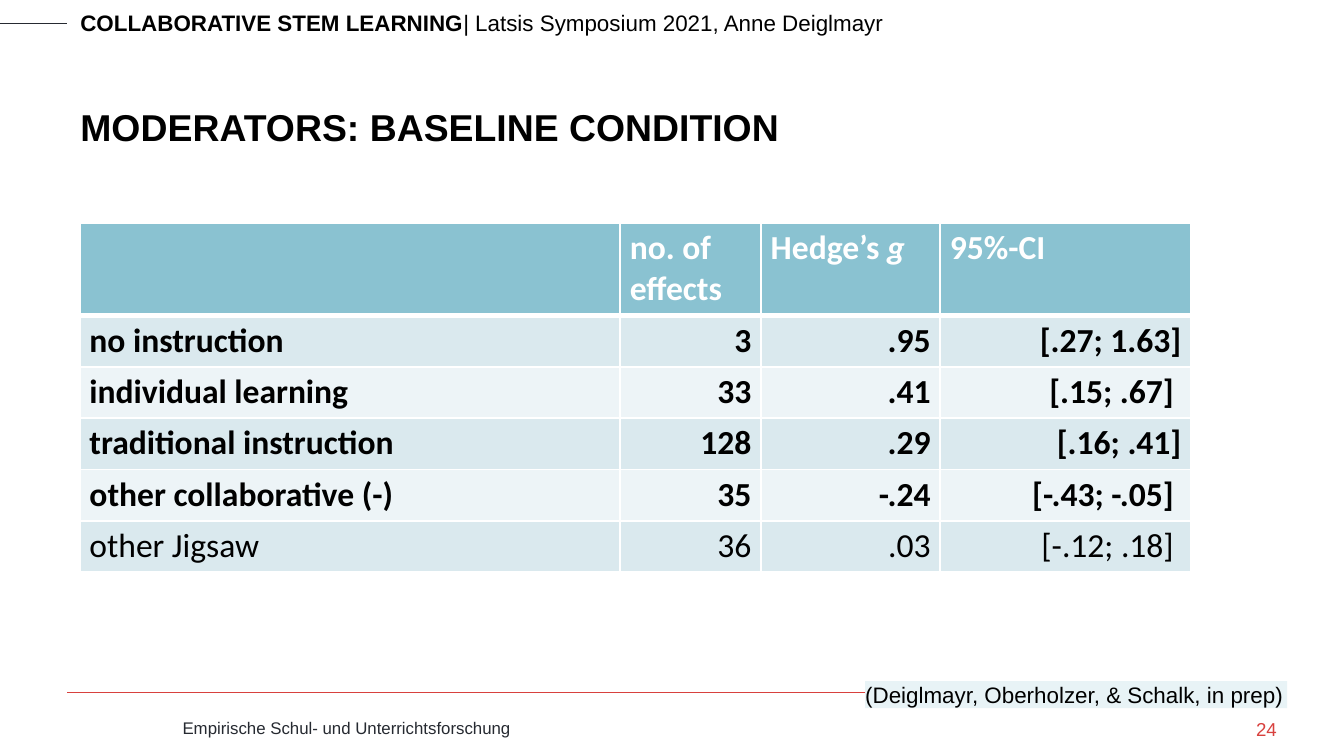
from lxml import etree
from pptx import Presentation
from pptx.dml.color import RGBColor
from pptx.enum.shapes import MSO_CONNECTOR
from pptx.enum.text import MSO_ANCHOR, PP_ALIGN
from pptx.oxml.ns import qn
from pptx.util import Pt

STRAIGHT = MSO_CONNECTOR.STRAIGHT
TOP, BOTTOM = MSO_ANCHOR.TOP, MSO_ANCHOR.BOTTOM
LEFT, RIGHT = PP_ALIGN.LEFT, PP_ALIGN.RIGHT

BLACK = RGBColor(0x00, 0x00, 0x00)
WHITE = RGBColor(0xFF, 0xFF, 0xFF)
DARK = RGBColor(0x26, 0x2A, 0x31)
RED = RGBColor(0xD8, 0x41, 0x3E)
HEADER_FILL = RGBColor(0x8A, 0xC2, 0xD1)
BAND_FILLS = (RGBColor(0xDA, 0xE9, 0xEE), RGBColor(0xED, 0xF4, 0xF7))
NOTE_FILL = RGBColor(0xE8, 0xF3, 0xF6)

COL_WIDTHS = (289.5, 75.5, 96, 134.5)
HEADER_HEIGHT, ROW_HEIGHT = 49.5, 27.5
HEADER = ("", "no. of effects", "Hedge’s ", "95%-CI")
# Label, number of effects, effect size, interval, bold
ROWS = (
    ("no instruction", "3", ".95", "[.27; 1.63]", True),
    ("individual learning", "33", ".41", "[.15; .67] ", True),
    ("traditional instruction", "128", ".29", "[.16; .41]", True),
    ("other collaborative (-)", "35", "-.24", "[-.43; -.05] ", True),
    ("other Jigsaw", "36", ".03", "[-.12; .18] ", False),
)


def style_run(r, size, color, bold=False, font="Arial"):
    r.font.name = font
    r.font.size = Pt(size)
    r.font.bold = bold
    r.font.color.rgb = color


def add_text(slide, box, text, size, color=BLACK, bold=False, align=LEFT,
             anchor=TOP, inset=True, wrap=True):
    s = slide.shapes.add_textbox(*[Pt(v) for v in box])
    tf = s.text_frame
    tf.word_wrap = wrap
    tf.vertical_anchor = anchor
    if not inset:
        tf.margin_left = tf.margin_right = tf.margin_top = tf.margin_bottom = 0
    p = tf.paragraphs[0]
    p.text = text
    p.alignment = align
    style_run(p.runs[0], size, color, bold)
    return s


def add_rule(slide, x1, x2, y, color):
    s = slide.shapes.add_connector(STRAIGHT, Pt(x1), Pt(y), Pt(x2), Pt(y))
    s.line.color.rgb = color
    s.line.width = Pt(0.25)
    etree.SubElement(s._element.spPr, qn("a:effectLst"))


def add_border(cell, side, width):
    ln = etree.SubElement(cell._tc.get_or_add_tcPr(), qn(f"a:ln{side}"),
                          w=str(Pt(width)))
    fill = etree.SubElement(ln, qn("a:solidFill"))
    etree.SubElement(fill, qn("a:srgbClr"), val=str(WHITE))


def fill_cell(cell, text, fill, color, bold, align, top=1, bottom=1):
    for side, width in (("L", 1), ("R", 1), ("T", top), ("B", bottom)):
        add_border(cell, side, width)
    cell.fill.solid()
    cell.fill.fore_color.rgb = fill
    cell.margin_left = cell.margin_right = Pt(5.2)
    cell.margin_top = cell.margin_bottom = Pt(2.6)
    p = cell.text_frame.paragraphs[0]
    p.text = text
    p.alignment = align
    for r in p.runs:
        style_run(r, 18, color, bold, "Calibri")


def add_results_table(slide):
    height = HEADER_HEIGHT + ROW_HEIGHT * len(ROWS)
    table = slide.shapes.add_table(
        len(ROWS) + 1, len(COL_WIDTHS), Pt(42.75), Pt(119.5),
        Pt(sum(COL_WIDTHS)), Pt(height)).table
    for col, width in zip(table.columns, COL_WIDTHS):
        col.width = Pt(width)
    for i, row in enumerate(table.rows):
        row.height = Pt(ROW_HEIGHT if i else HEADER_HEIGHT)

    # Header row
    for j, text in enumerate(HEADER):
        fill_cell(table.cell(0, j), text, HEADER_FILL, WHITE, True, LEFT,
                  bottom=3)
    r = table.cell(0, 2).text_frame.paragraphs[0].add_run()
    r.text = "g"
    style_run(r, 18, WHITE, True, "Calibri")
    r.font.italic = True

    # Banded body rows
    for i, (*texts, bold) in enumerate(ROWS):
        for j, text in enumerate(texts):
            fill_cell(table.cell(i + 1, j), text, BAND_FILLS[i % 2], BLACK,
                      bold, RIGHT if j else LEFT, top=1 if i else 3)


def main():
    prs = Presentation()
    prs.slide_width, prs.slide_height = Pt(720), Pt(405)
    slide = prs.slides.add_slide(prs.slide_layouts[6])

    # Running head
    add_rule(slide, 0, 36, 12.5, DARK)
    s = add_text(slide, (36, 1.5, 551.5, 21.6), "COLLABORATIVE STEM LEARNING",
                 12, bold=True)
    r = s.text_frame.paragraphs[0].add_run()
    r.text = "| Latsis Symposium 2021, Anne Deiglmayr"
    style_run(r, 12, BLACK)

    # Footer
    add_rule(slide, 36, 684, 371, RED)
    add_text(slide, (90.75, 381, 534, 18),
             "Empirische Schul- und Unterrichtsforschung", 9, DARK)

    # Title
    add_text(slide, (36, 23.75, 648.5, 59.75),
             "MODERATORS: BASELINE CONDITION", 20, bold=True, anchor=BOTTOM)

    # Page number
    add_text(slide, (625.5, 384.5, 58.5, 16), "24", 10, RED, align=RIGHT,
             inset=False)

    add_results_table(slide)

    # Citation
    s = add_text(slide, (463.5, 365, 226, 14.4),
                 "(Deiglmayr, Oberholzer, & Schalk, in prep)", 12,
                 inset=False, wrap=False)
    s.fill.solid()
    s.fill.fore_color.rgb = NOTE_FILL

    prs.save("out.pptx")


if __name__ == "__main__":
    main()
